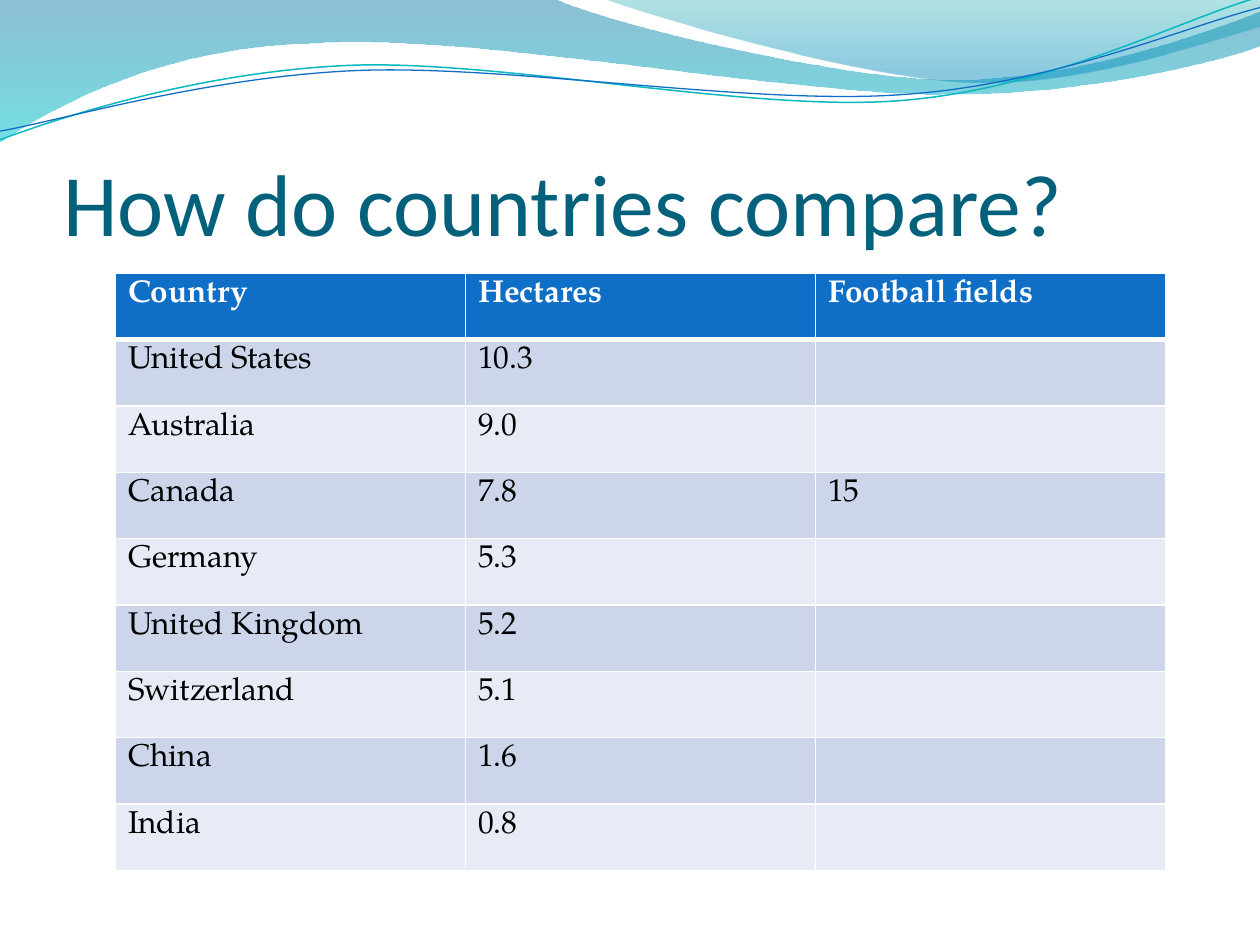
from lxml import etree
from pptx import Presentation
from pptx.dml.color import RGBColor
from pptx.enum.text import MSO_ANCHOR, MSO_AUTO_SIZE, PP_ALIGN
from pptx.oxml.ns import qn
from pptx.util import Pt

BOTTOM = MSO_ANCHOR.BOTTOM
TOP = MSO_ANCHOR.TOP
LEFT = PP_ALIGN.LEFT
NO_FIT = MSO_AUTO_SIZE.NONE

WHITE = RGBColor(0xFF, 0xFF, 0xFF)
BLACK = RGBColor(0x00, 0x00, 0x00)
BLUE = RGBColor(0x0F, 0x6F, 0xC6)
TEAL = RGBColor(0x0A, 0xB8, 0xBF)
TITLE_TEAL = RGBColor(0x04, 0x61, 0x7B)
BAND_DARK = RGBColor(0xCC, 0xD5, 0xEA)
BAND_LIGHT = RGBColor(0xE7, 0xEB, 0xF5)
DEEP_BLUE = RGBColor(0x00, 0x74, 0xA1)
CYAN = RGBColor(0x00, 0xC6, 0xCF)
SEA_GREEN = RGBColor(0x00, 0xA1, 0xA9)
SKY_BLUE = RGBColor(0x00, 0x8B, 0xBF)

WIDE_WAVE = [
    (0, 0), (316.8, -0.7),
    (342.7, 12.2, 478.1, 45.4, 545.8, 45.4),
    (614.2, 45.4, 689.8, 18.7, 720, 6.5),
    (720.7, 25.9),
    (707.8, 31.7, 626.4, 54.7, 537.1, 54),
    (447.8, 54, 275, 20.2, 185, 24.5),
    (92.9, 25.9, 33.1, 59.8, -0.7, 81.4),
    (0, 0),
]
RIGHT_WAVE = [
    (344.9, -0.7),
    (366.5, 7.9, 491, 44.6, 553.7, 46.8),
    (616.3, 49.7, 691.9, 23, 720, 15.1),
    (720, 0), (344.9, -0.7),
]
TEAL_LINE = [
    (0, 79.9),
    (34.6, 67, 113.8, 41, 199.4, 37.4),
    (284.4, 33.8, 427, 64.1, 513.4, 57.6),
    (599.8, 51.1, 675.4, 10.8, 718.6, -1.4),
]
BLUE_LINE = [
    (0, 74.9),
    (33.8, 69.1, 118.1, 43.9, 203.8, 40.3),
    (290.2, 36.7, 429.8, 60.5, 516.2, 54),
    (601.9, 48.2, 677.5, 15.1, 720, 4.3),
]

ROWS = [
    ("Country", "Hectares", "Football fields"),
    ("United States", "10.3", ""),
    ("Australia", "9.0", ""),
    ("Canada", "7.8", "15"),
    ("Germany", "5.3", ""),
    ("United Kingdom", "5.2", ""),
    ("Switzerland", "5.1", ""),
    ("China", "1.6", ""),
    ("India", "0.8", ""),
]


class Deck:
    title_font = "Calibri"
    body_font = "TeX Gyre Pagella"
    title_size = 50
    body_size = 18

    def __init__(self):
        self.prs = Presentation()
        self.prs.slide_width, self.prs.slide_height = Pt(720), Pt(540)
        self.s = self.prs.slides.add_slide(self.prs.slide_layouts[5])

    def format_runs(self, p, font, size, color, bold=False):
        for r in p.runs:
            r.font.name = font
            r.font.size = Pt(size)
            r.font.color.rgb = color
            r.font.bold = bold

    def freeform(self, segments, close):
        points = [(Pt(x), Pt(y)) for seg in segments
                  for x, y in zip(seg[::2], seg[1::2])]
        builder = self.s.shapes.build_freeform(*points[0])
        builder.add_line_segments(points[1:], close=close)
        sp = builder.convert_to_shape()
        sp.shadow.inherit = False
        lines = iter(list(sp._element.spPr.iter(qn("a:lnTo"))))
        for seg in segments[1:]:
            first = next(lines)
            if len(seg) == 6:
                curve = etree.Element(qn("a:cubicBezTo"))
                first.addprevious(curve)
                for line in (first, next(lines), next(lines)):
                    curve.append(line[0])
                    line.getparent().remove(line)
        return sp

    def wave(self, segments, stops):
        sp = self.freeform(segments, True)
        sp.line.fill.background()
        sp.fill.gradient()
        sp.fill.gradient_angle = 270
        for stop, (position, color, _) in zip(sp.fill.gradient_stops, stops):
            stop.position = position
            stop.color.rgb = color
        colors = sp._element.spPr.iter(qn("a:srgbClr"))
        for element, (_, _, opacity) in zip(colors, stops):
            etree.SubElement(element, qn("a:alpha"), val=str(opacity * 1000))

    def curve(self, segments, color, width):
        sp = self.freeform(segments, False)
        sp.fill.background()
        sp.line.color.rgb = color
        sp.line.width = Pt(width)

    def title(self, text, left, top, width, height):
        sp = self.s.shapes.title
        sp.left, sp.top, sp.width, sp.height = map(Pt, (left, top, width, height))
        tf = sp.text_frame
        tf.text = text
        tf.auto_size = NO_FIT
        tf.vertical_anchor = BOTTOM
        tf.margin_left = tf.margin_right = tf.margin_bottom = 0
        tf.margin_top = Pt(3.6)
        p = tf.paragraphs[0]
        p.alignment = LEFT
        self.format_runs(p, self.title_font, self.title_size, TITLE_TEAL)

    def borders(self, cell, top, bottom):
        tc_pr = cell._tc.get_or_add_tcPr()
        for side, width in (("L", 1), ("R", 1), ("T", top), ("B", bottom)):
            ln = etree.SubElement(tc_pr, qn("a:ln" + side), w=str(Pt(width)))
            fill = etree.SubElement(ln, qn("a:solidFill"))
            etree.SubElement(fill, qn("a:srgbClr"), val=str(WHITE))

    def table(self, rows, left, top, col_width, row_height):
        n_rows, n_cols = len(rows), len(rows[0])
        table = self.s.shapes.add_table(
            n_rows, n_cols, Pt(left), Pt(top),
            Pt(col_width * n_cols), Pt(row_height * n_rows)).table
        for column in table.columns:
            column.width = Pt(col_width)
        for i, values in enumerate(rows):
            table.rows[i].height = Pt(row_height)
            header = i == 0
            band = BLUE if header else BAND_DARK if i % 2 else BAND_LIGHT
            for j, value in enumerate(values):
                cell = table.cell(i, j)
                self.borders(cell, 3 if i == 1 else 1, 3 if header else 1)
                cell.fill.solid()
                cell.fill.fore_color.rgb = band
                cell.vertical_anchor = TOP
                cell.text_frame.text = value
                self.format_runs(cell.text_frame.paragraphs[0], self.body_font,
                                 self.body_size, WHITE if header else BLACK, header)


def main():
    deck = Deck()
    deck.wave(WIDE_WAVE, [(0, DEEP_BLUE, 45), (1, CYAN, 55)])
    deck.wave(RIGHT_WAVE, [(0, SEA_GREEN, 30), (0.8, SKY_BLUE, 45)])
    deck.curve(TEAL_LINE, TEAL, 0.85)
    deck.curve(BLUE_LINE, BLUE, 0.75)
    deck.title("How do countries compare?", 36, 55.2, 648, 90)
    deck.table(ROWS, 66, 156.25, 200, 37.92)
    deck.prs.save("out.pptx")


if __name__ == "__main__":
    main()
